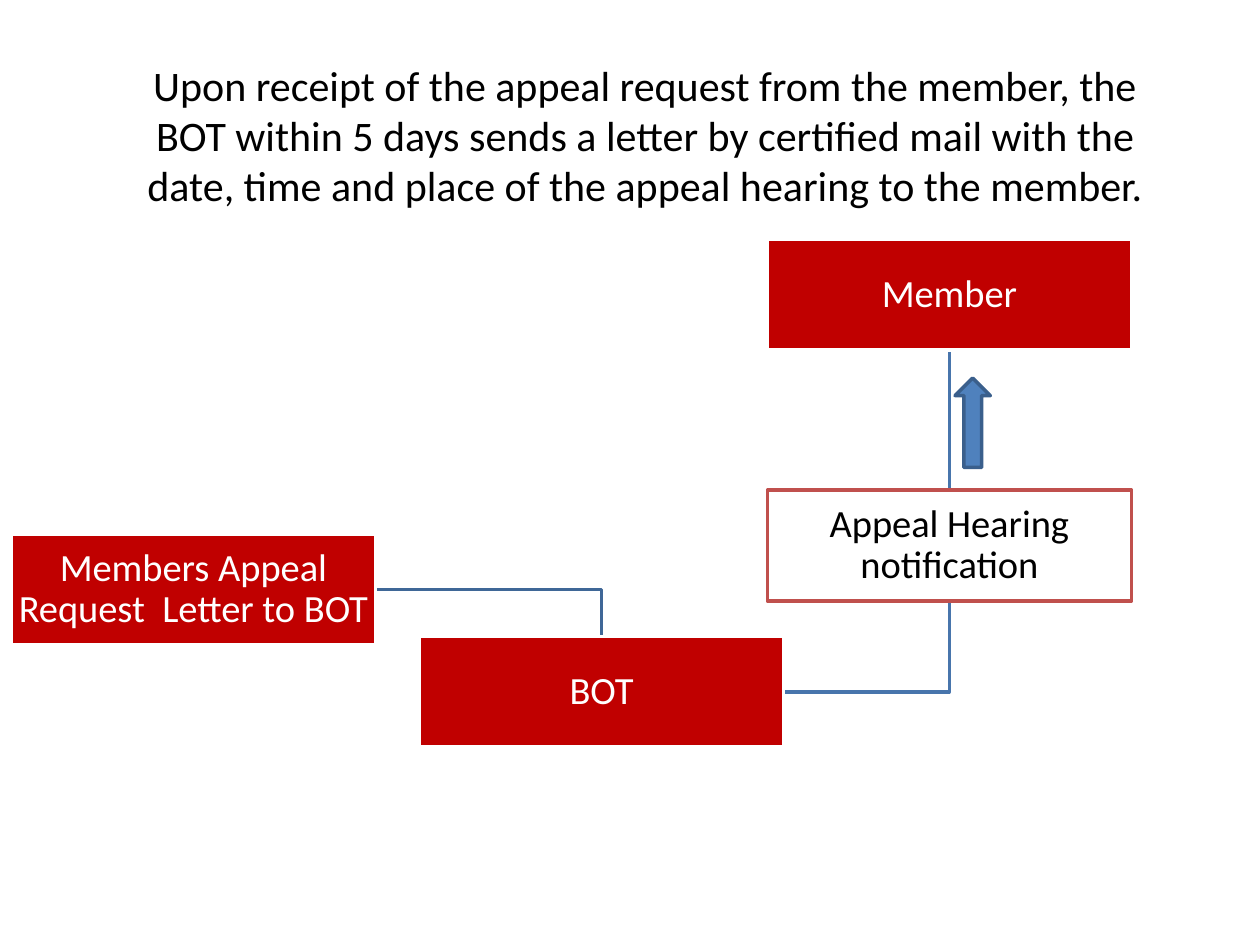
from pptx import Presentation
from pptx.dml.color import RGBColor
from pptx.enum.shapes import MSO_SHAPE
from pptx.enum.text import MSO_ANCHOR, PP_ALIGN
from pptx.util import Inches, Pt

RECTANGLE = MSO_SHAPE.RECTANGLE
DOWN_ARROW = MSO_SHAPE.DOWN_ARROW
MIDDLE = MSO_ANCHOR.MIDDLE
CENTER = PP_ALIGN.CENTER

RED = RGBColor(0xC0, 0x00, 0x00)
BRICK = RGBColor(0xC0, 0x50, 0x4D)
WHITE = RGBColor(0xFF, 0xFF, 0xFF)
BLACK = RGBColor(0x00, 0x00, 0x00)
ARROW_BLUE = RGBColor(0x4F, 0x81, 0xBD)
ARROW_EDGE = RGBColor(0x3A, 0x5F, 0x8C)
REPLY_BLUE = RGBColor(0x48, 0x75, 0xAC)
REQUEST_BLUE = RGBColor(0x3F, 0x67, 0x97)

deck = Presentation()
deck.slide_width = Inches(10)
deck.slide_height = Inches(7.5)
COL = deck.slide_width // 100
ROW = deck.slide_height // 75
slide = deck.slides.add_slide(deck.slide_layouts[6])


def write(frame, wording, size, color):
    frame.word_wrap = True
    paragraph = frame.paragraphs[0]
    paragraph.alignment = CENTER
    run = paragraph.add_run()
    run.text = wording
    run.font.name = "Calibri"
    run.font.size = Pt(size)
    run.font.color.rgb = color
    return paragraph


def paint(shape, fill, edge):
    shape.shadow.inherit = False
    shape.fill.solid()
    shape.fill.fore_color.rgb = fill
    shape.line.color.rgb = edge
    shape.line.width = Pt(2)


BOX_WIDTH, BOX_HEIGHT = 28.9, 8.8
request_left, request_top = 0.9, 42.4
bot_left, bot_top = 33.3, 50.5
member_left, member_top = 60.9, 19
notice_top = 38.9

bot_right = bot_left + BOX_WIDTH
bot_middle = bot_top + BOX_HEIGHT / 2
member_center = member_left + BOX_WIDTH / 2
request_middle = request_top + BOX_HEIGHT / 2
bot_center = bot_left + BOX_WIDTH / 2

routes = [
    (bot_right, bot_middle, member_center, bot_middle,
     member_center, member_top + BOX_HEIGHT, REPLY_BLUE),
    (bot_right, bot_middle, member_center, bot_middle,
     member_center, notice_top + BOX_HEIGHT, REPLY_BLUE),
    (request_left + BOX_WIDTH, request_middle, bot_center, request_middle,
     bot_center, bot_top, REQUEST_BLUE),
]
for start_x, start_y, bend_x, bend_y, end_x, end_y, color in routes:
    builder = slide.shapes.build_freeform(round(start_x * COL), round(start_y * ROW))
    builder.add_line_segments(
        [(round(bend_x * COL), round(bend_y * ROW)),
         (round(end_x * COL), round(end_y * ROW))],
        close=False,
    )
    route = builder.convert_to_shape()
    route.shadow.inherit = False
    route.fill.background()
    route.line.color.rgb = color
    route.line.width = Pt(2)

steps = [
    ("Members Appeal Request  Letter to BOT", request_left, request_top, RED, WHITE, WHITE),
    ("BOT", bot_left, bot_top, RED, WHITE, WHITE),
    ("Appeal Hearing notification", member_left, notice_top, WHITE, BRICK, BLACK),
    ("Member", member_left, member_top, RED, WHITE, WHITE),
]
for wording, left, top, fill, edge, ink in steps:
    step = slide.shapes.add_shape(
        RECTANGLE, round(left * COL), round(top * ROW),
        round(BOX_WIDTH * COL), round(BOX_HEIGHT * ROW))
    paint(step, fill, edge)
    frame = step.text_frame
    frame.vertical_anchor = MIDDLE
    frame.margin_left = frame.margin_right = Inches(0.02)
    frame.margin_top = frame.margin_bottom = Inches(0.02)
    write(frame, wording, 22, ink).line_spacing = 0.9

heading = slide.shapes.add_textbox(
    round(8.3 * COL), round(4.2 * ROW), round(85.8 * COL), round(13.1 * ROW))
write(
    heading.text_frame,
    "Upon receipt of the appeal request from the member, the BOT within 5 days "
    "sends a letter by certified mail with the date, time and place of the "
    "appeal hearing to the member.",
    24, BLACK)

delivery = slide.shapes.add_shape(
    DOWN_ARROW, round(75.8 * COL), 30 * ROW, round(2.8 * COL), round(7.1 * ROW))
delivery.rotation = 180
paint(delivery, ARROW_BLUE, ARROW_EDGE)

deck.save("out.pptx")
